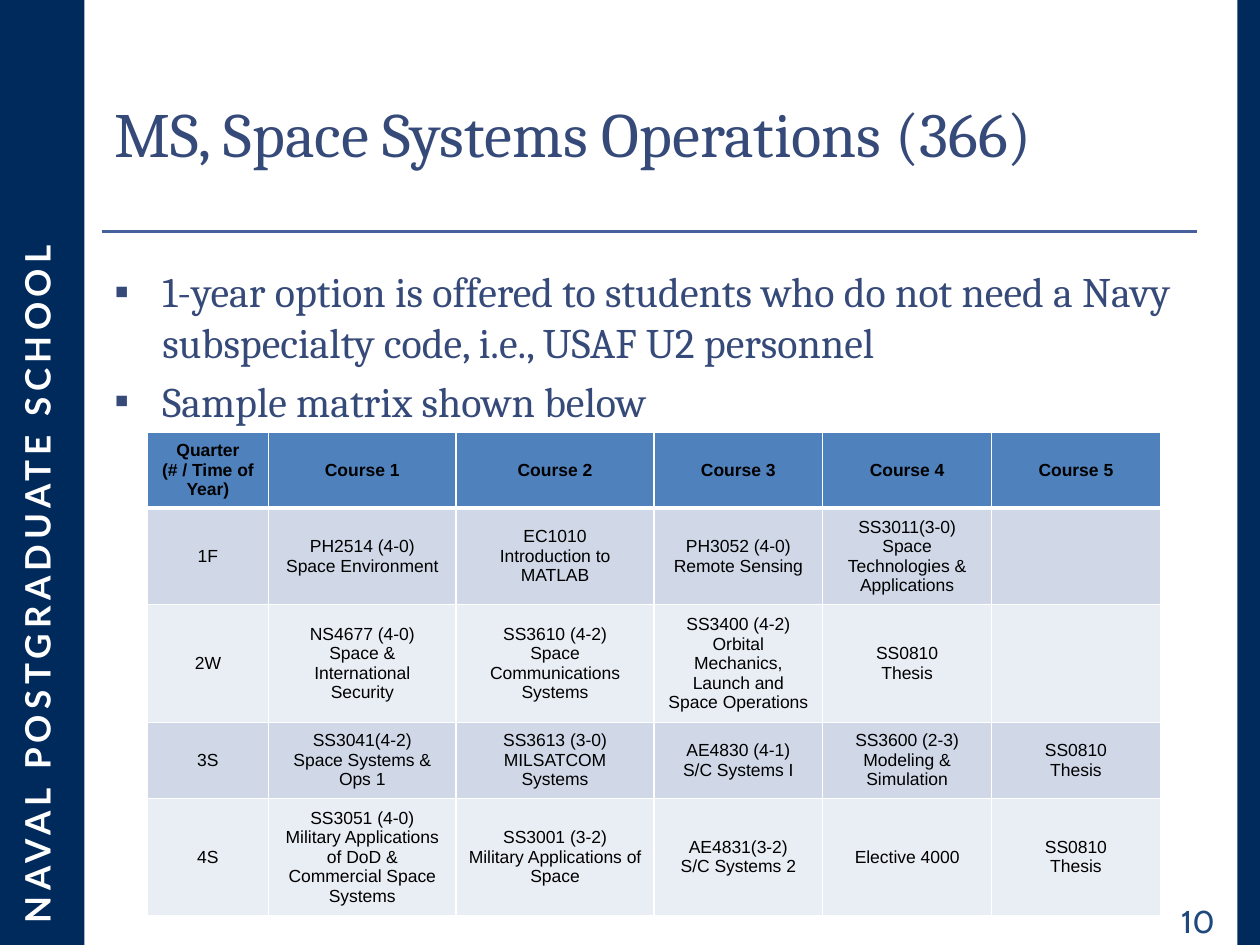
import dataclasses

import lxml.etree
import pptx
import pptx.dml.color
import pptx.enum.shapes
import pptx.enum.text
import pptx.oxml.ns
import pptx.util

Inches = pptx.util.Inches
Pt = pptx.util.Pt
Align = pptx.enum.text.PP_ALIGN
Anchor = pptx.enum.text.MSO_ANCHOR
qn = pptx.oxml.ns.qn
RGB = pptx.dml.color.RGBColor.from_string


@dataclasses.dataclass
class Theme:
    navy: str = "00295C"
    rule: str = "47619D"
    ink: str = "364A7A"
    page: str = "1F497D"
    head: str = "4F81BD"
    bands: tuple = ("D0D8E8", "E9EDF4")
    white: str = "FFFFFF"
    black: str = "000000"
    title: int = 36
    body: int = 24
    side: int = 20
    num: int = 18
    cell: int = 10


theme = Theme()


def add_run(para, text, face, size, color, bold=False):
    run = para.add_run()
    run.text = text
    run.font.name = face
    run.font.size = Pt(size)
    run.font.color.rgb = RGB(color)
    run.font.bold = bold
    return run


def add_box(left, top, width, height):
    box = slide.shapes.add_textbox(
        Inches(left), Inches(top), Inches(width), Inches(height))
    box.text_frame.word_wrap = True
    return box


deck = pptx.Presentation()
deck.slide_width = Inches(10)
deck.slide_height = Inches(7.5)
slide = deck.slides.add_slide(deck.slide_layouts[6])
back = slide.background.fill
back.solid()
back.fore_color.rgb = RGB(theme.navy)

# White page between the navy bands
page = slide.shapes.add_shape(
    pptx.enum.shapes.MSO_SHAPE.RECTANGLE,
    Inches(0.67), 0, Inches(9.15), Inches(7.5))
page.shadow.inherit = False
page.fill.solid()
page.fill.fore_color.rgb = RGB(theme.white)
page.line.fill.background()

# School name up the left side
side = add_box(-3.16, 3.75, 6.91, 0.44)
side.rotation = 270
run = add_run(side.text_frame.paragraphs[0], "NAVAL POSTGRADUATE SCHOOL",
              "Lato", theme.side, theme.white, True)
run.font._element.set("spc", "300")

rule = slide.shapes.add_connector(
    pptx.enum.shapes.MSO_CONNECTOR.STRAIGHT,
    Inches(0.81), Inches(1.84), Inches(9.5), Inches(1.84))
rule.line.color.rgb = RGB(theme.rule)
rule.line.width = Pt(1.5)
lxml.etree.SubElement(rule._element.spPr, qn("a:effectLst"))

num = add_box(9.27, 7.11, 0.47, 0.4)
para = num.text_frame.paragraphs[0]
para.alignment = Align.RIGHT
add_run(para, "10", "Cabin", theme.num, theme.page)

title = add_box(0.81, 0.6, 8.69, 1.02)
title.text_frame.vertical_anchor = Anchor.MIDDLE
para = title.text_frame.paragraphs[0]
para.line_spacing = 0.8
add_run(para, "MS, Space Systems Operations (366)",
        "Cambria", theme.title, theme.ink)

points = [
    "1-year option is offered to students who do not need a Navy "
    "subspecialty code, i.e., USAF U2 personnel",
    "Sample matrix shown below",
]
frame = add_box(0.81, 2.06, 8.69, 5.19).text_frame
for i, text in enumerate(points):
    para = frame.add_paragraph() if i else frame.paragraphs[0]
    props = para._p.get_or_add_pPr()
    props.set("marL", str(Inches(0.38)))
    props.set("indent", str(-Inches(0.38)))
    lxml.etree.SubElement(props, qn("a:buFont"), typeface="Arial")
    lxml.etree.SubElement(props, qn("a:buChar"), char="▪")
    para.space_before = Pt(5 if i else 0)
    add_run(para, text, "Cambria", theme.body, theme.ink)

# Course matrix: a line break in a cell starts a new paragraph
rows = [
    ["Quarter\n(# / Time of Year)"] + [f"Course {n}" for n in range(1, 6)],
    ["1F", "PH2514 (4-0)\nSpace Environment",
     "EC1010\nIntroduction to MATLAB", "PH3052 (4-0)\nRemote Sensing",
     "SS3011(3-0)\nSpace Technologies & Applications", ""],
    ["2W", "NS4677 (4-0)\nSpace & International Security",
     "SS3610 (4-2)\nSpace Communications Systems",
     "SS3400 (4-2)\nOrbital Mechanics, Launch and Space Operations",
     "SS0810\nThesis", ""],
    ["3S", "SS3041(4-2)\nSpace Systems & Ops 1",
     "SS3613 (3-0)\nMILSATCOM Systems", "AE4830 (4-1)\nS/C Systems I",
     "SS3600 (2-3)\nModeling & Simulation", "SS0810\nThesis"],
    ["4S", "SS3051 (4-0)\nMilitary Applications of DoD & "
     "Commercial Space Systems",
     "SS3001 (3-2)\nMilitary Applications of Space",
     "AE4831(3-2)\nS/C Systems 2", "Elective 4000", "SS0810\nThesis"],
]
widths = [0.96, 1.49, 1.57, 1.34, 1.34, 1.34]
heights = [0.56, 0.72, 0.87, 0.56, 0.87]
grid = slide.shapes.add_table(
    len(rows), len(widths), Inches(1.17), Inches(3.43),
    Inches(sum(widths)), Inches(sum(heights))).table
for col, width in zip(grid.columns, widths):
    col.width = Inches(width)
for r, row in enumerate(rows):
    grid.rows[r].height = Inches(heights[r])
    for c, text in enumerate(row):
        cell = grid.cell(r, c)
        props = cell._tc.get_or_add_tcPr()
        for edge in ("L", "R", "T", "B"):
            thick = (r, edge) in ((0, "B"), (1, "T"))
            line = lxml.etree.SubElement(
                props, qn(f"a:ln{edge}"), w=str(Pt(3 if thick else 1)))
            fill = lxml.etree.SubElement(line, qn("a:solidFill"))
            lxml.etree.SubElement(fill, qn("a:srgbClr"), val=theme.white)
        cell.fill.solid()
        cell.fill.fore_color.rgb = RGB(
            theme.bands[(r - 1) % 2] if r else theme.head)
        cell.vertical_anchor = Anchor.MIDDLE
        if not text:
            continue
        for i, part in enumerate(text.split("\n")):
            frame = cell.text_frame
            para = frame.add_paragraph() if i else frame.paragraphs[0]
            para.alignment = Align.CENTER
            add_run(para, part, "Arial", theme.cell, theme.black, r == 0)

deck.save("out.pptx")
